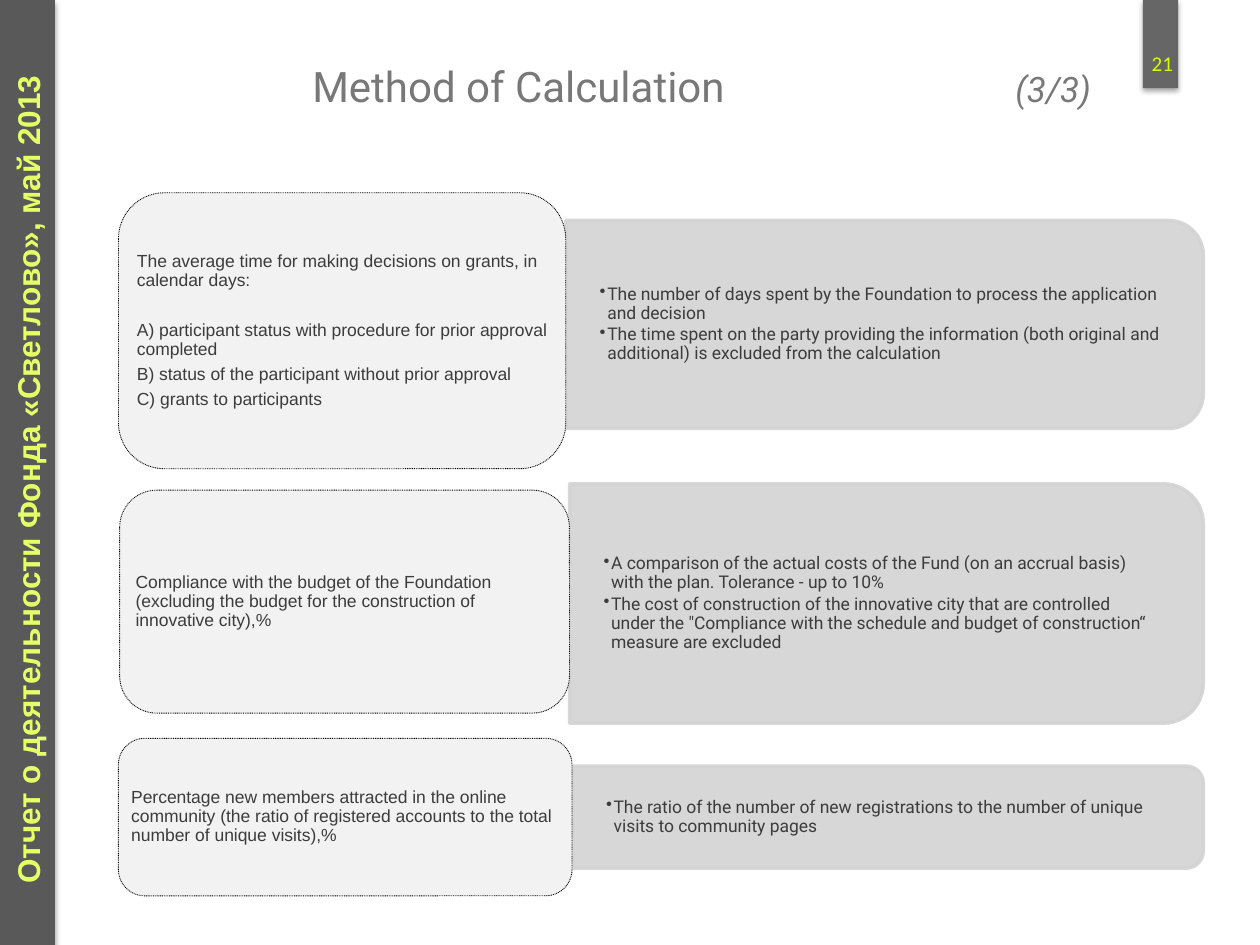
"""Build the slide on the method of calculation, part 3 of 3."""
from lxml.etree import SubElement
from pptx import Presentation
from pptx.dml.color import RGBColor
from pptx.enum.dml import MSO_LINE
from pptx.enum.shapes import MSO_SHAPE as Shape
from pptx.enum.text import MSO_ANCHOR as Anchor, PP_ALIGN as Align
from pptx.oxml.ns import qn
from pptx.util import Inches, Pt

TAB_GREY = RGBColor(0x66, 0x66, 0x66)
SIDEBAR_GREY = RGBColor(0x59, 0x59, 0x59)
NUMBER_LIME = RGBColor(0xD4, 0xFF, 0x01)
SIDEBAR_LIME = RGBColor(0xE5, 0xFF, 0x67)
PANEL_GREY = RGBColor(0xD3, 0xD3, 0xD3)
CARD_GREY = RGBColor(0xF2, 0xF2, 0xF2)
INK = RGBColor(0x3C, 0x3C, 0x3C)
TITLE_GREY = RGBColor(0x78, 0x78, 0x78)
BLACK = RGBColor(0, 0, 0)

PANEL_RIGHT = 9.55
CORNER_INSET = 0.0488
TITLE_TAB = 5.58

REPORT = "Отчет о деятельности Фонда «Светлово», май 2013"
MEASURES = [
    {
        "card": (0.94, 1.53, 3.55, 2.19),
        "panel": (1.75, 1.65),
        "name": [
            "The average time for making decisions on grants, in calendar days:",
            "A) participant status with procedure for prior approval completed",
            "B) status of the participant without prior approval",
            "C) grants to participants",
        ],
        "method": [
            "The number of days spent by the Foundation to process the application and decision",
            "The time spent on the party providing the information (both original and additional) "
            "is excluded from the calculation",
        ],
    },
    {
        "card": (0.95, 3.89, 3.57, 1.77),
        "panel": (3.84, 1.9),
        "name": [
            "Compliance with the budget of the Foundation (excluding the budget for the "
            "construction of innovative city),%",
        ],
        "method": [
            "A comparison of the actual costs of the Fund (on an accrual basis) with the plan. "
            "Tolerance - up to 10%",
            "The cost of construction of the innovative city that are controlled under the "
            "\"Compliance with the schedule and budget of construction“ measure are excluded",
        ],
    },
    {
        "card": (0.94, 5.86, 3.6, 1.25),
        "panel": (6.08, 0.81),
        "name": [
            "Percentage new members attracted in the online community (the ratio of registered "
            "accounts to the total number of unique visits),%",
        ],
        "method": [
            "The ratio of the number of new registrations to the number of unique visits to "
            "community pages",
        ],
    },
]


def add_block(slide, preset, box, fill, line=None, width=0.75):
    block = slide.shapes.add_shape(preset, *map(Inches, box))
    block.shadow.inherit = False
    block.fill.solid()
    block.fill.fore_color.rgb = fill
    if line is None:
        block.line.fill.background()
    else:
        block.line.color.rgb = line
        block.line.width = Pt(width)
    return block


def add_shadow(block):
    effects = block._element.spPr.find(qn("a:effectLst"))
    shadow = SubElement(effects, qn("a:outerShdw"), blurRad=str(Pt(3.1)),
                        dist=str(Pt(1.8)), dir="5400000", rotWithShape="0")
    color = SubElement(shadow, qn("a:srgbClr"), val="000000")
    SubElement(color, qn("a:alpha"), val="35000")


def add_text(slide, box, paragraphs, *, font="Arial", size=10, color=INK, bold=False,
             align=Align.LEFT, anchor=Anchor.TOP, insets=(0.1, 0.05), wrap=True,
             line_spacing=1, after=0, gap=0, bullet=False, tab=None):
    label = slide.shapes.add_textbox(*map(Inches, box))
    frame = label.text_frame
    frame.word_wrap = wrap
    frame.vertical_anchor = anchor
    frame.margin_left = frame.margin_right = Inches(insets[0])
    frame.margin_top = frame.margin_bottom = Inches(insets[1])
    for index, text in enumerate(paragraphs):
        paragraph = frame.paragraphs[0] if index == 0 else frame.add_paragraph()
        paragraph.alignment = align
        paragraph.line_spacing = line_spacing
        paragraph.space_after = Pt(after)
        if index == 1 and gap:
            paragraph.space_before = Pt(gap)
        properties = paragraph._p.get_or_add_pPr()
        if bullet:
            properties.set("marL", str(Inches(0.06)))
            properties.set("indent", str(Inches(-0.06)))
            SubElement(properties, qn("a:buChar"), char="•")
        if tab:
            stops = SubElement(properties, qn("a:tabLst"))
            SubElement(stops, qn("a:tab"), pos=str(Inches(tab)), algn="l")
        run = paragraph.add_run()
        run.text = text
        run.font.name, run.font.size = font, Pt(size)
        run.font.bold, run.font.color.rgb = bold, color
    return label


def add_panel(slide, left, top, height, method):
    width = PANEL_RIGHT - left
    upright = (left + (width - height) / 2, top + (height - width) / 2, height, width)
    panel = add_block(slide, Shape.ROUND_2_SAME_RECTANGLE, upright, PANEL_GREY, PANEL_GREY, 2)
    panel.rotation = 90
    for color in panel._element.spPr.iter(qn("a:srgbClr")):
        SubElement(color, qn("a:alpha"), val="90000")
    inset = height * CORNER_INSET
    add_text(slide, (left, top + inset, width - inset, height - 2 * inset), method,
             font="Roboto", anchor=Anchor.MIDDLE, insets=(0.27, 0.14),
             line_spacing=0.9, after=1.5, bullet=True)


def add_card(slide, box, name):
    card = add_block(slide, Shape.ROUNDED_RECTANGLE, box, CARD_GREY, BLACK, 0.5)
    card.line.dash_style = MSO_LINE.ROUND_DOT
    left, top, width, height = box
    inset = height * CORNER_INSET
    add_text(slide, (left + inset, top + inset, width - 2 * inset, height - 2 * inset), name,
             anchor=Anchor.MIDDLE, insets=(0.04, 0.02), line_spacing=0.9, after=3.5, gap=14)


def main():
    deck = Presentation()
    deck.slide_width, deck.slide_height = Inches(10), Inches(7.5)
    slide = deck.slides.add_slide(deck.slide_layouts[6])

    add_shadow(add_block(slide, Shape.RECTANGLE, (9.07, 0, 0.28, 0.7), TAB_GREY))
    add_text(slide, (9.01, 0.3, 0.43, 0.4), ["21"], font="Calibri", size=12,
             color=NUMBER_LIME, align=Align.CENTER, anchor=Anchor.MIDDLE)
    add_shadow(add_block(slide, Shape.RECTANGLE, (0, 0, 0.43, 7.5), SIDEBAR_GREY, SIDEBAR_GREY))
    report = add_text(slide, (-3.15, 3.54, 6.74, 0.4), [REPORT], size=18,
                      color=SIDEBAR_LIME, bold=True, wrap=False)
    report.rotation = 270

    for measure in MEASURES:
        left, _, width, _ = measure["card"]
        add_panel(slide, left + width, *measure["panel"], measure["method"])
        add_card(slide, measure["card"], measure["name"])

    title = add_text(slide, (2.38, 0.43, 6.39, 0.87), ["Method of Calculation\t"],
                     font="Roboto", size=24, color=TITLE_GREY, tab=TITLE_TAB)
    part = title.text_frame.paragraphs[0].add_run()
    part.text = "(3/3)"
    part.font.name, part.font.size = "Roboto", Pt(20)
    part.font.italic, part.font.color.rgb = True, TITLE_GREY

    deck.save("out.pptx")


if __name__ == "__main__":
    main()
